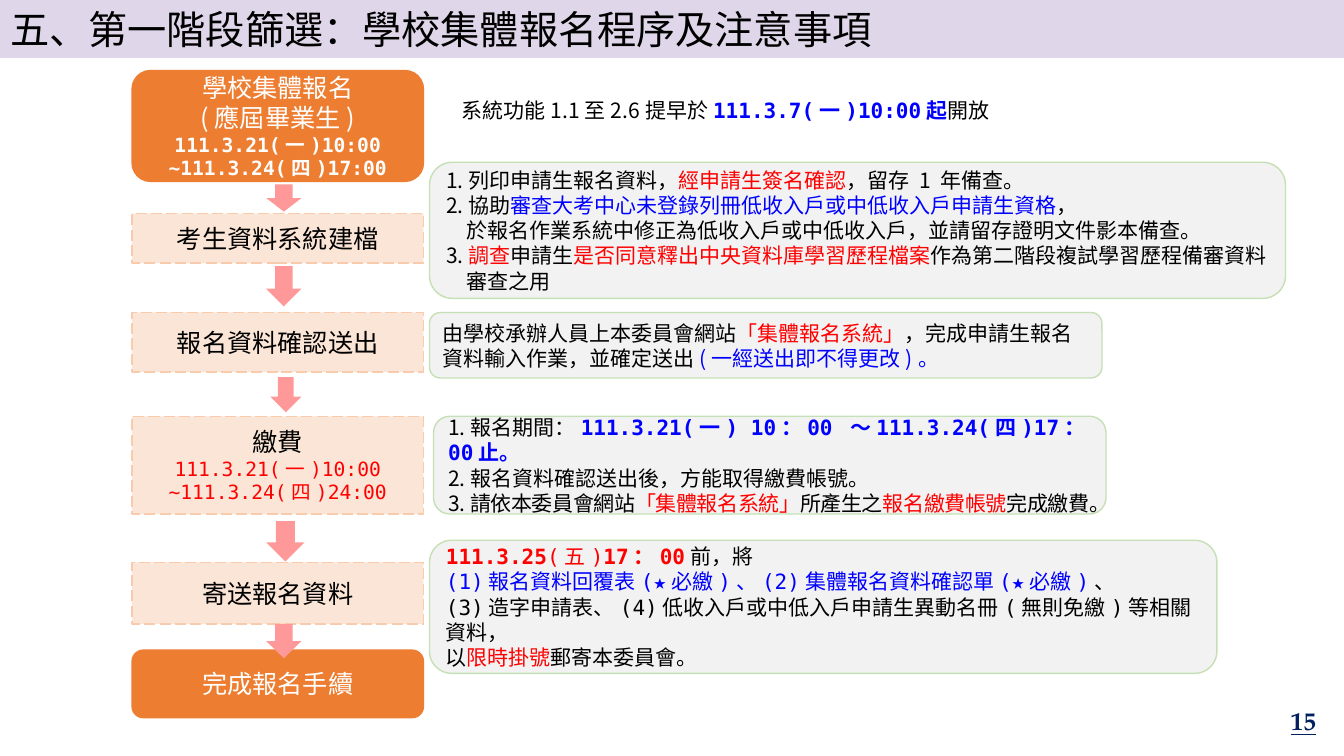
from pptx import Presentation
from pptx.dml.color import RGBColor
from pptx.enum.dml import MSO_LINE
from pptx.enum.shapes import MSO_SHAPE
from pptx.enum.text import MSO_ANCHOR, MSO_AUTO_SIZE, PP_ALIGN
from pptx.oxml.ns import qn
from pptx.util import Inches, Pt
from lxml import etree

RECT, ROUNDED, ARROW = MSO_SHAPE.RECTANGLE, MSO_SHAPE.ROUNDED_RECTANGLE, MSO_SHAPE.DOWN_ARROW
LEFT, CENTER, RIGHT = PP_ALIGN.LEFT, PP_ALIGN.CENTER, PP_ALIGN.RIGHT
MIDDLE, NO_FIT, LONG_DASH = MSO_ANCHOR.MIDDLE, MSO_AUTO_SIZE.NONE, MSO_LINE.LONG_DASH
SANS, MONO, SERIF = "Noto Sans CJK JP", "DejaVu Sans Mono", "TeX Gyre Pagella"
BLACK, WHITE, RED, BLUE, NAVY = "000000", "FFFFFF", "FF0000", "0000FF", "002060"
LAVENDER, ORANGE, PEACH, PEACH_EDGE = "DFD7E9", "ED7D31", "FBE5D6", "F8CBAD"
PINK, GREY, GREEN = "FF9999", "F2F2F2", "C5E0B4"

# Style name: font, size, colour, bold
STYLES = {
    "title": (SANS, 28, BLACK, False),
    "end": (SANS, 18, WHITE, False),
    "end date": (MONO, 14, WHITE, True),
    "step": (SANS, 18, BLACK, False),
    "step date": (MONO, 14, RED, False),
    "plain": (SANS, 15, BLACK, False),
    "red": (SANS, 15, RED, False),
    "blue": (SANS, 15, BLUE, False),
    "mono": (MONO, 15, BLACK, False),
    "mono red": (MONO, 15, RED, False),
    "mono blue": (MONO, 15, BLUE, False),
    "bold red": (MONO, 15, RED, True),
    "bold blue": (MONO, 15, BLUE, True),
    "number": (SERIF, 18, NAVY, True),
}


def paint(box, fill, edge=None):
    box.fill.solid()
    box.fill.fore_color.rgb = RGBColor.from_string(fill)
    if edge:
        box.line.color.rgb = RGBColor.from_string(edge)
        box.line.width = Pt(1)
    else:
        box.line.fill.background()


def write(box, lines, align=LEFT):
    """Fill a box with lines, each a list of (style, text) spans, and return the paragraphs."""
    frame = box.text_frame
    frame.word_wrap = True
    frame.auto_size = NO_FIT
    frame.vertical_anchor = MIDDLE
    for index, line in enumerate(lines):
        para = frame.add_paragraph() if index else frame.paragraphs[0]
        para.alignment = align
        for style, text in line:
            span = para.add_run()
            span.text = text
            font = span.font
            name, size, colour, font.bold = STYLES[style]
            font.name, font.size = name, Pt(size)
            font.color.rgb = RGBColor.from_string(colour)
            east_asian = etree.SubElement(span._r.get_or_add_rPr(), qn("a:ea"))
            east_asian.set("typeface", SANS)
    return frame.paragraphs


deck = Presentation()
deck.slide_width, deck.slide_height = Inches(13.33), Inches(7.5)
page = deck.slides.add_slide(deck.slide_layouts[5])

title = page.shapes.title
title.left, title.top, title.width, title.height = 0, 0, deck.slide_width, Inches(0.57)
paint(title, LAVENDER, LAVENDER)
write(title, [[("title", "五、第一階段篩選：學校集體報名程序及注意事項")]])

# Flow down the left: top, height, lines
steps = [
    (0.7, 1.1, [[("end", "學校集體報名")], [("end", "(應屆畢業生)")],
                [("end date", "111.3.21(一)10:00")], [("end date", "~111.3.24(四)17:00")]]),
    (2.12, 0.49, [[("step", "考生資料系統建檔")]]),
    (3.1, 0.59, [[("step", "報名資料確認送出")]]),
    (4.13, 0.97, [[("step", "繳費")], [("step date", "111.3.21(一)10:00")],
                  [("step date", "~111.3.24(四)24:00")]]),
    (5.58, 0.61, [[("step", "寄送報名資料")]]),
    (6.45, 0.67, [[("end", "完成報名手續")]]),
]
for index, (top, height, lines) in enumerate(steps):
    is_end = index in (0, len(steps) - 1)
    step = page.shapes.add_shape(ROUNDED if is_end else RECT,
                                 Inches(1.31), Inches(top), Inches(2.89), Inches(height))
    step.shadow.inherit = False
    if is_end:
        paint(step, ORANGE, ORANGE)
    else:
        paint(step, PEACH, PEACH_EDGE)
        step.line.dash_style = LONG_DASH
    write(step, lines, CENTER)

arrows = [(2.64, 1.83, 0.35, 0.27), (2.64, 2.64, 0.35, 0.4), (2.68, 3.74, 0.31, 0.35),
          (2.64, 5.17, 0.38, 0.4), (2.64, 6.19, 0.35, 0.34)]
for place in arrows:
    arrow = page.shapes.add_shape(ARROW, *map(Inches, place))
    arrow.shadow.inherit = False
    paint(arrow, PINK)

# Notes beside the steps: place, lines
notes = {
    "entry": ((4.26, 1.61, 8.49, 1.35), [
        [("plain", "1.列印申請生報名資料，"), ("red", "經申請生簽名確認"), ("plain", "，留存 1 年備查。")],
        [("plain", "2.協助"), ("blue", "審查大考中心未登錄列冊低收入戶或中低收入戶申請生資格"), ("plain", "，")],
        [("plain", "於報名作業系統中修正為低收入戶或中低收入戶，並請留存證明文件影本備查。")],
        [("plain", "3."), ("red", "調查"), ("plain", "申請生"),
         ("red", "是否同意釋出中央資料庫學習歷程檔案"), ("plain", "作為第二階段複試學習歷程備審資料")],
        [("plain", "審查之用")]]),
    "confirmation": ((4.26, 3.1, 6.67, 0.65), [
        [("plain", "由學校承辦人員上本委員會網站"), ("red", "「集體報名系統」"),
         ("plain", "，完成申請生報名資料輸入作業，並確定送出"), ("blue", "(一經送出即不得更改)。")]]),
    "payment": ((4.3, 4.13, 6.67, 0.97), [
        [("plain", "1.報名期間："), ("bold blue", "111.3.21(一) 10：00 〜111.3.24(四)17：00止。")],
        [("plain", "2.報名資料確認送出後，方能取得繳費帳號。")],
        [("plain", "3.請依本委員會網站"), ("red", "「集體報名系統」"), ("plain", "所產生之"),
         ("red", "報名繳費帳號"), ("plain", "完成繳費。")]]),
    "mailing": ((4.26, 5.36, 7.81, 1.32), [
        [("bold red", "111.3.25"), ("mono red", "(五)"), ("bold red", "17：00"), ("plain", "前，將")],
        [("mono blue", "(1)報名資料回覆表(★必繳)、(2)集體報名資料確認單(★必繳)"), ("mono", "、")],
        [("mono", "(3)造字申請表、(4)低收入戶或中低入戶申請生異動名冊(無則免繳)等相關資料，")],
        [("plain", "以"), ("red", "限時掛號"), ("plain", "郵寄本委員會。")]]),
}
paragraphs = {}
for name, (place, lines) in notes.items():
    note = page.shapes.add_shape(ROUNDED, *map(Inches, place))
    note.shadow.inherit = False
    paint(note, GREY, GREEN)
    paragraphs[name] = write(note, lines)

# Continuation lines sit under the text of their item
for index in (2, 4):
    paragraphs["entry"][index]._p.get_or_add_pPr().set("marL", str(Inches(0.2)))
# The last payment line is slightly condensed to stay on one line
for span in paragraphs["payment"][2].runs:
    span._r.get_or_add_rPr().set("spc", "-30")

opening = page.shapes.add_textbox(Inches(4.48), Inches(0.91), Inches(8.27), Inches(0.37))
write(opening, [[("plain", "系統功能1.1至2.6提早於"), ("bold blue", "111.3.7(一)10:00起"), ("plain", "開放")]])

number = page.shapes.add_textbox(Inches(10.15), Inches(6.95), Inches(3), Inches(0.4))
write(number, [[("number", "15")]], RIGHT)[0].runs[0].font.underline = True

deck.save("out.pptx")
